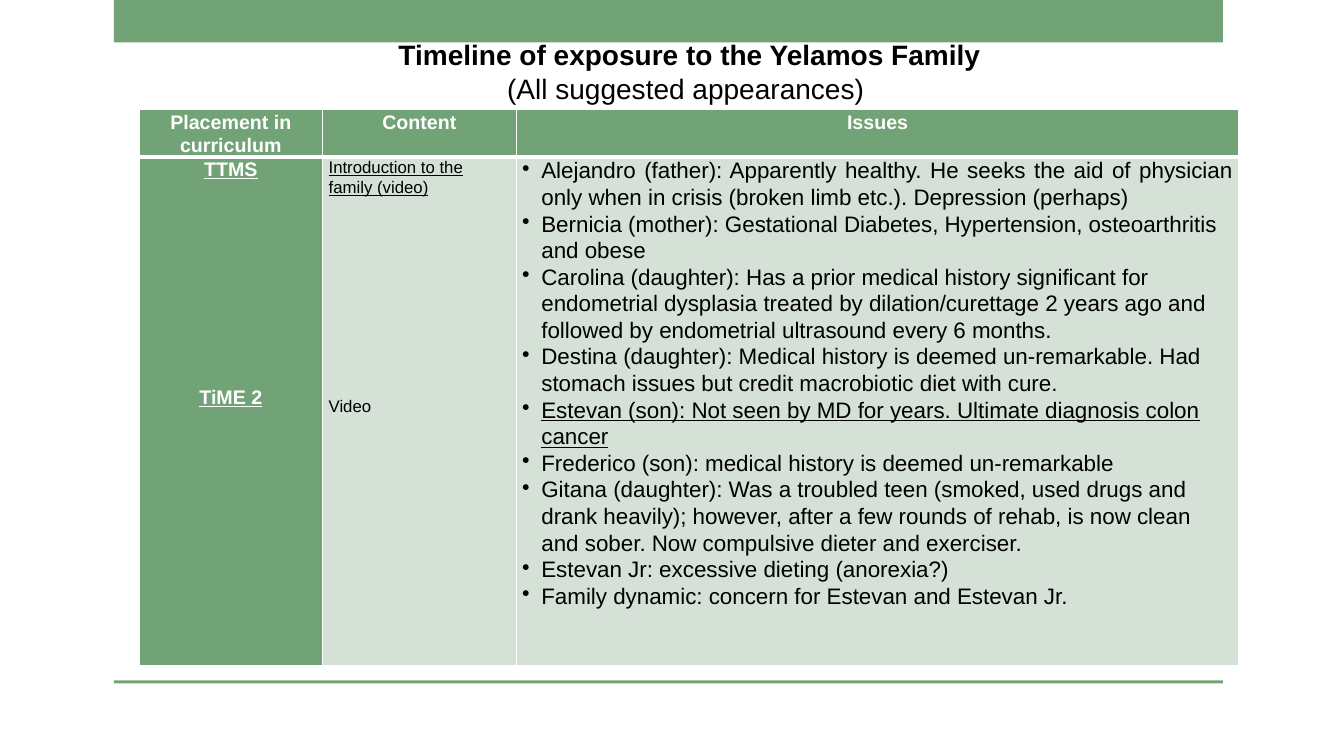
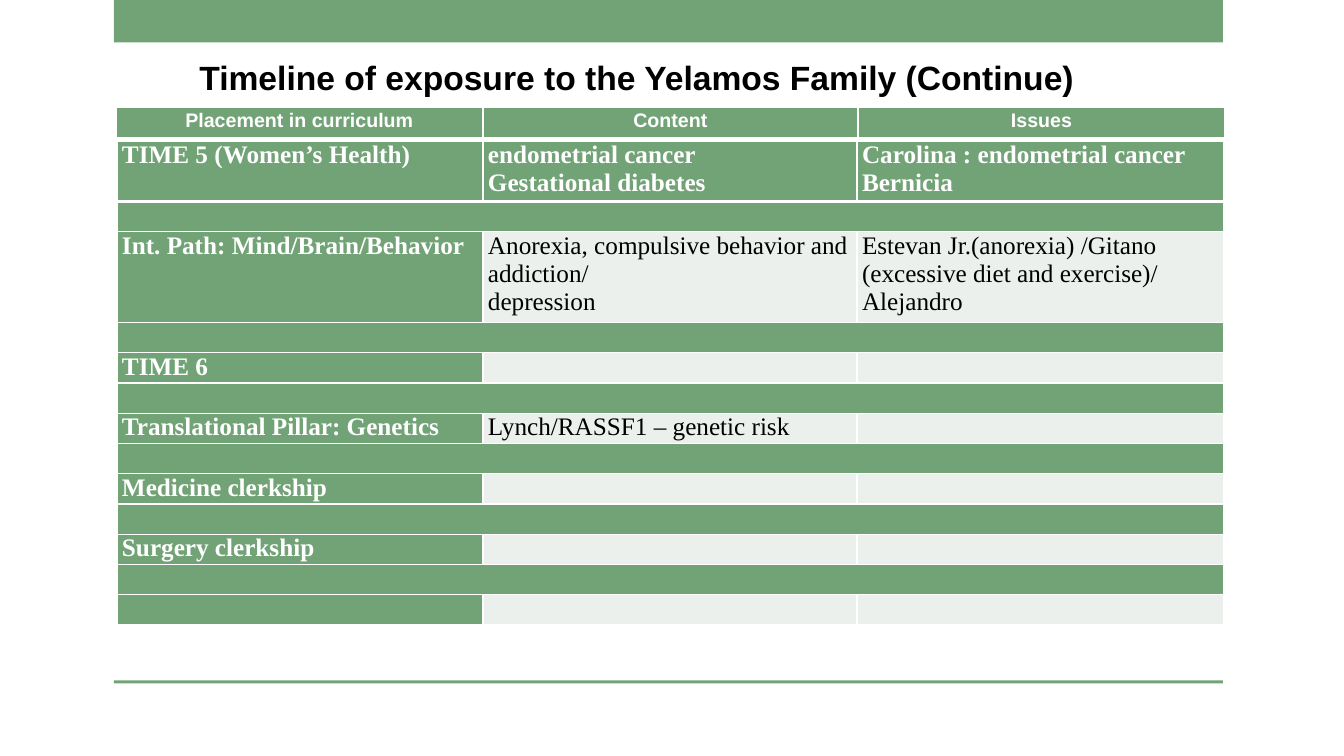
from lxml import etree
from pptx import Presentation
from pptx.dml.color import RGBColor
from pptx.enum.shapes import MSO_SHAPE
from pptx.enum.text import MSO_ANCHOR, MSO_AUTO_SIZE, PP_ALIGN
from pptx.oxml.ns import qn
from pptx.util import Inches, Pt

CENTER, LEFT, JUSTIFY = PP_ALIGN.CENTER, PP_ALIGN.LEFT, PP_ALIGN.JUSTIFY
TOP, MIDDLE = MSO_ANCHOR.TOP, MSO_ANCHOR.MIDDLE
TITLE_ONLY = 5

COLORS = {"green": "72A376", "mint": "D5E0D6", "pale": "EBF0EC",
          "white": "FFFFFF", "black": "000000"}

# Text styles
PLAIN = {"font": "Arial", "size": 16, "color": "black", "bold": False,
         "underline": False, "align": LEFT, "line": None, "before": 0, "bullet": False}
TITLE = PLAIN | {"align": CENTER, "bold": True}
HEADING = TITLE | {"size": 14, "color": "white", "line": 1.07}
CONTENT = PLAIN | {"size": 12, "line": 1.07}
ISSUE = PLAIN | {"line": 1.07, "bullet": True}
BODY = PLAIN | {"font": "Times New Roman", "size": 18}
LABEL = BODY | {"color": "white", "bold": True}

HEADINGS = ["Placement in curriculum", "Content", "Issues"]

PLACEMENTS = [("TTMS", {"underline": True}),
              ("TiME 2", {"underline": True, "before": 146})]
VIDEOS = [("Introduction to the family (video)", {"underline": True}),
          ("Video", {"before": 142})]
ISSUES = [
    ("Alejandro (father): Apparently healthy. He seeks the aid of physician only when "
     "in crisis (broken limb etc.). Depression (perhaps)", {"align": JUSTIFY}),
    "Bernicia (mother): Gestational Diabetes, Hypertension, osteoarthritis and obese",
    "Carolina (daughter): Has a prior medical history significant for endometrial "
    "dysplasia treated by dilation/curettage 2 years ago and followed by endometrial "
    "ultrasound every 6 months.",
    "Destina (daughter): Medical history is deemed un-remarkable. Had stomach issues "
    "but credit macrobiotic diet with cure.",
    ("Estevan (son): Not seen by MD for years. Ultimate diagnosis colon cancer",
     {"underline": True}),
    "Frederico (son): medical history is deemed un-remarkable",
    "Gitana (daughter): Was a troubled teen (smoked, used drugs and drank heavily); "
    "however, after a few rounds of rehab, is now clean and sober. Now compulsive "
    "dieter and exerciser.",
    "Estevan Jr: excessive dieting (anorexia?)",
    "Family dynamic: concern for Estevan and Estevan Jr.",
]

# Placement, content, issues; a full-width band separates the rows
TIMELINE = [
    (["TIME 5 (Women’s Health)"],
     ["endometrial cancer", "Gestational diabetes"],
     ["Carolina : endometrial cancer", "Bernicia"]),
    (["Int. Path: Mind/Brain/Behavior"],
     ["Anorexia, compulsive behavior and addiction/", "depression"],
     ["Estevan Jr.(anorexia) /Gitano (excessive diet and exercise)/ Alejandro"]),
    (["TIME 6"], [""], [""]),
    (["Translational Pillar: Genetics"], ["Lynch/RASSF1 – genetic risk"], [""]),
    (["Medicine clerkship"], [""], [""]),
    (["Surgery clerkship"], [""], [""]),
    ([""], [""], [""]),
]
LINE_HEIGHT = 0.3
TIMELINE_LINES = [2, 3, 1, 1, 1, 1, 1]


def rgb(name):
    return RGBColor.from_string(COLORS[name])


def write(frame, paras, style):
    """Fill a text frame; each item is a text or a (text, style changes) pair."""
    for index, item in enumerate(paras):
        text, changes = (item, {}) if isinstance(item, str) else item
        look = style | changes
        para = frame.paragraphs[0] if index == 0 else frame.add_paragraph()
        if look["bullet"]:
            props = para._p.get_or_add_pPr()
            props.set("marL", str(Inches(0.19)))
            props.set("indent", str(-Inches(0.19)))
            etree.SubElement(props, qn("a:buChar"), char="•")
        if text:
            para.text = text
        para.alignment = look["align"]
        para.line_spacing = look["line"]
        para.space_before = Pt(look["before"])
        font = para.font
        font.name, font.size = look["font"], Pt(look["size"])
        font.bold, font.underline = look["bold"], look["underline"]
        font.color.rgb = rgb(look["color"])


def add_borders(cell, bottom):
    props = cell._tc.get_or_add_tcPr()
    for side, points in (("L", 1), ("R", 1), ("T", 1), ("B", bottom)):
        line = etree.SubElement(props, qn("a:ln" + side), w=str(Pt(points)))
        fill = etree.SubElement(line, qn("a:solidFill"))
        etree.SubElement(fill, qn("a:srgbClr"), val=COLORS["white"])


def format_cell(cell, paras, style, fill, margin, bottom=1):
    cell.margin_left = cell.margin_right = Inches(margin)
    cell.margin_top = cell.margin_bottom = 0
    add_borders(cell, bottom)
    cell.fill.solid()
    cell.fill.fore_color.rgb = rgb(fill)
    write(cell.text_frame, paras, style)


def add_grid(page, left, top, widths, heights):
    table = page.shapes.add_table(
        len(heights), len(widths), Inches(left), Inches(top),
        Inches(sum(widths)), Inches(sum(heights))).table
    table.first_row = table.horz_banding = False
    for column, width in zip(table.columns, widths):
        column.width = Inches(width)
    for row, height in zip(table.rows, heights):
        row.height = Inches(height)
    return table


def fill_headings(table):
    for column, heading in enumerate(HEADINGS):
        format_cell(table.cell(0, column), [heading], HEADING, "green", 0.06, bottom=3)


def add_page(deck, box, paras, size, anchor, wrap=True):
    page = deck.slides.add_slide(deck.slide_layouts[TITLE_ONLY])
    title = page.shapes.title
    title.left, title.top, title.width, title.height = map(Inches, box)
    frame = title.text_frame
    frame.auto_size = MSO_AUTO_SIZE.NONE
    frame.word_wrap = wrap
    frame.vertical_anchor = anchor
    write(frame, paras, TITLE | {"size": size})
    return page


def move_bands_to_master(deck, page):
    """Draw the top band and bottom rule once, on the master all slides share."""
    for top, height in ((0, 0.42), (6.75, 0.03)):
        band = page.shapes.add_shape(MSO_SHAPE.RECTANGLE, Inches(1.13), Inches(top),
                                     Inches(11), Inches(height))
        band.shadow.inherit = False
        band.fill.solid()
        band.fill.fore_color.rgb = rgb("green")
        band.line.fill.background()
        deck.slide_master.shapes.element.append(band.element)


def build_appearances(deck):
    page = add_page(deck, (3.13, 0.32, 7.42, 0.77),
                    ["Timeline of exposure to the Yelamos Family",
                     ("(All suggested appearances) ", {"bold": False})], 20, MIDDLE)
    table = add_grid(page, 1.38, 1.09, [1.82, 1.92, 7.17], [0.44, 5.05])
    fill_headings(table)
    columns = [(PLACEMENTS, HEADING, "green"), (VIDEOS, CONTENT, "mint"),
               (ISSUES, ISSUE, "mint")]
    for column, (paras, style, fill) in enumerate(columns):
        format_cell(table.cell(1, column), paras, style, fill, 0.06)
    return page


def build_timeline(deck):
    page = add_page(deck, (1.84, 0.51, 8.95, 0.5),
                    ["Timeline of exposure to the Yelamos Family (Continue)"],
                    24, TOP, wrap=False)
    heights = [LINE_HEIGHT] * (2 * len(TIMELINE) - 1)
    heights[::2] = [LINE_HEIGHT * lines for lines in TIMELINE_LINES]
    table = add_grid(page, 1.16, 1.4, [3.63, 3.71, 3.64], heights)
    for index, entry in enumerate(TIMELINE):
        row = 2 * index
        for column, paras in enumerate(entry):
            strong = index == 0 or column == 0
            format_cell(table.cell(row, column), paras, LABEL if strong else BODY,
                        "green" if strong else "pale", 0.05, 3 if index == 0 else 1)
        if index:
            band = table.cell(row - 1, 0)
            band.merge(table.cell(row - 1, 2))
            format_cell(band, [""], LABEL, "green", 0.05)
    fill_headings(add_grid(page, 1.15, 1.07, [3.64, 3.72, 3.64], [0.31]))


def main():
    deck = Presentation()
    deck.slide_width, deck.slide_height = Inches(13.33), Inches(7.5)
    first_page = build_appearances(deck)
    move_bands_to_master(deck, first_page)
    build_timeline(deck)
    deck.save("out.pptx")


if __name__ == "__main__":
    main()
